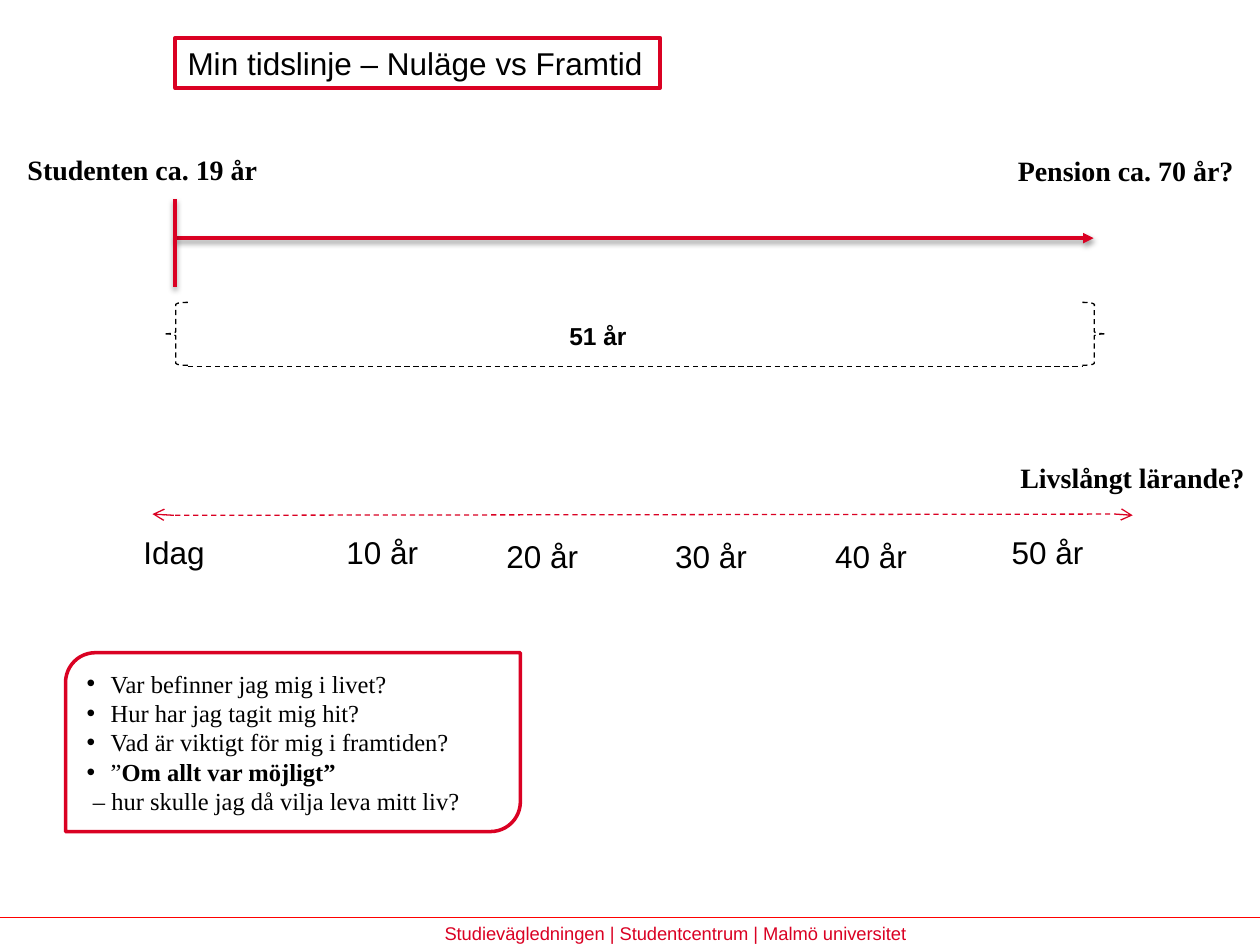
from dataclasses import dataclass

from lxml.etree import SubElement
from pptx import Presentation
from pptx.dml.color import RGBColor
from pptx.enum.dml import MSO_LINE_DASH_STYLE as Dash
from pptx.enum.shapes import MSO_CONNECTOR_TYPE as Connector, MSO_SHAPE as Shape
from pptx.enum.text import MSO_ANCHOR as Anchor, PP_ALIGN as Align
from pptx.oxml.ns import qn
from pptx.util import Inches, Pt


@dataclass(frozen=True)
class Theme:
    """Colours, fonts, type sizes and line widths of the slide."""
    red: str = "DA0123"
    rule: str = "FF0000"
    ink: str = "000000"
    paper: str = "FFFFFF"
    sans: str = "Arial"
    serif: str = "Times New Roman"
    heading: float = 18
    label: float = 16
    body: float = 14
    footer: float = 10.5
    thick: float = 2
    thin: float = 0.75


THEME = Theme()


def add_bullet(paragraph, indent=0.19):
    """Give a paragraph a hanging round bullet."""
    properties = paragraph._p.get_or_add_pPr()
    properties.set("marL", str(Inches(indent)))
    properties.set("indent", str(-Inches(indent)))
    SubElement(properties, qn("a:buFont"), typeface=THEME.sans)
    SubElement(properties, qn("a:buChar"), char="•")


def write(paragraph, text, *, size=THEME.heading, font=THEME.sans,
          color=THEME.ink, bold=False):
    """Append a formatted run to a paragraph."""
    run = paragraph.add_run()
    run.text = text
    run.font.size = Pt(size)
    run.font.name = font
    run.font.bold = bold
    run.font.color.rgb = RGBColor.from_string(color)


def add_label(slide, text, left, top, width, height, wrap=False, **style):
    """Place one line of text."""
    frame = slide.shapes.add_textbox(
        Inches(left), Inches(top), Inches(width), Inches(height)).text_frame
    frame.word_wrap = wrap
    write(frame.paragraphs[0], text, **style)


def style_line(line, color, width, dash=None):
    """Set colour, width and dash of a line."""
    line.color.rgb = RGBColor.from_string(color)
    line.width = Pt(width)
    if dash:
        line.dash_style = dash


def add_shadow(effects):
    """Add a soft shadow that falls straight down."""
    shadow = SubElement(effects, qn("a:outerShdw"), blurRad=str(Pt(3.1)),
                        dist=str(Pt(1.6)), dir="5400000", rotWithShape="0")
    shade = SubElement(shadow, qn("a:srgbClr"), val=THEME.ink)
    SubElement(shade, qn("a:alpha"), val="38000")


def add_line(slide, start, end, color=THEME.red, width=THEME.thin,
             dash=None, head=None, shadow=False):
    """Draw a straight line, with an arrowhead at its end if named."""
    line = slide.shapes.add_connector(
        Connector.STRAIGHT, *(Inches(value) for value in (*start, *end)))
    style_line(line.line, color, width, dash)
    if head:
        SubElement(line.line._get_or_add_ln(), qn("a:tailEnd"), type=head)
    effects = SubElement(line._element.spPr, qn("a:effectLst"))
    if shadow:
        add_shadow(effects)


def add_outline(slide, kind, left, top, width, height, color=THEME.red,
                weight=THEME.thick, dash=None, fill=None):
    """Draw a preset shape with an outline and optional fill."""
    shape = slide.shapes.add_shape(
        kind, Inches(left), Inches(top), Inches(width), Inches(height))
    shape.shadow.inherit = False
    style_line(shape.line, color, weight, dash)
    if fill:
        shape.fill.solid()
        shape.fill.fore_color.rgb = RGBColor.from_string(fill)
    else:
        shape.fill.background()
    return shape


def add_title(slide):
    """Place the framed title."""
    title = add_outline(slide, Shape.RECTANGLE, 1.39, 0.3, 3.85, 0.4,
                        fill=THEME.paper)
    title.text_frame.word_wrap = False
    heading = title.text_frame.paragraphs[0]
    heading.alignment = Align.LEFT
    write(heading, "Min tidslinje – Nuläge vs Framtid")


def add_working_life(slide):
    """Draw the line from graduation to pension and its span."""
    start, end = 1.39, 8.68
    solid = dict(width=THEME.thick, shadow=True)
    add_line(slide, (start, 1.89), (end, 1.89), head="triangle", **solid)
    add_line(slide, (start, 1.58), (start, 2.28), **solid)
    for kind, center in ((Shape.LEFT_BRACE, start), (Shape.RIGHT_BRACE, end)):
        add_outline(slide, kind, center - 0.09, 2.4, 0.19, 0.5,
                    color=THEME.ink, weight=THEME.thin, dash=Dash.DASH)
    add_line(slide, (start + 0.1, 2.91), (end - 0.09, 2.91),
             color=THEME.ink, dash=Dash.DASH)
    add_label(slide, "51 år", 4.42, 2.5, 0.66, 0.34,
              size=THEME.body, bold=True)
    milestone = dict(size=THEME.label, font=THEME.serif, bold=True)
    add_label(slide, "Studenten ca. 19 år", 0.12, 1.16, 2.03, 0.37,
              wrap=True, **milestone)
    add_label(slide, "Pension ca. 70 år?", 7.98, 1.17, 2.03, 0.37,
              wrap=True, **milestone)
    add_label(slide, "Livslångt lärande?", 8, 3.61, 2.01, 0.37, **milestone)


def add_learning_line(slide):
    """Draw the dashed line with its decades."""
    add_line(slide, (1.39, 4.09), (8.85, 4.08), dash=Dash.DASH)
    add_line(slide, (1.38, 4.09), (1.21, 4.08), head="arrow")
    add_line(slide, (8.85, 4.08), (8.99, 4.09), head="arrow")
    add_label(slide, "Idag", 1.04, 4.18, 0.69, 0.4)
    decades = ((2.65, 4.18), (3.92, 4.21), (5.26, 4.21),
               (6.53, 4.21), (7.93, 4.18))
    for count, (left, top) in enumerate(decades, start=1):
        add_label(slide, f"{count * 10} år", left, top, 0.78, 0.4)


def add_questions(slide):
    """Place the panel of questions to reflect on."""
    panel = add_outline(slide, Shape.ROUND_2_DIAG_RECTANGLE,
                        0.52, 5.18, 3.61, 1.42, fill=THEME.paper)
    frame = panel.text_frame
    frame.word_wrap = True
    frame.vertical_anchor = Anchor.MIDDLE
    questions = (
        (("Var befinner jag mig i livet?", False),),
        (("Hur har jag tagit mig hit?", False),),
        (("Vad är viktigt för mig i framtiden?", False),),
        (("”", False), ("Om allt var möjligt”", True)),
        (("– hur skulle jag då vilja leva mitt liv?", False),),
    )
    for index, parts in enumerate(questions):
        question = frame.add_paragraph() if index else frame.paragraphs[0]
        question.alignment = Align.LEFT
        if index < len(questions) - 1:
            add_bullet(question)
        else:
            question._p.get_or_add_pPr().set("marL", str(Inches(0.05)))
        for text, bold in parts:
            write(question, text, size=THEME.body, font=THEME.serif, bold=bold)


def add_footer(slide):
    """Place the bottom rule and the sender."""
    add_line(slide, (10, 7.28), (0, 7.28), color=THEME.rule)
    add_label(slide, "Studievägledningen | Studentcentrum | Malmö universitet",
              3.43, 7.27, 6.2, 0.29, wrap=True,
              size=THEME.footer, color=THEME.red)


def main():
    """Build the timeline slide."""
    deck = Presentation()
    deck.slide_width, deck.slide_height = Inches(10), Inches(7.5)
    slide = deck.slides.add_slide(deck.slide_layouts[6])
    for add_part in (add_footer, add_title, add_working_life,
                     add_learning_line, add_questions):
        add_part(slide)
    deck.save("out.pptx")


if __name__ == "__main__":
    main()
